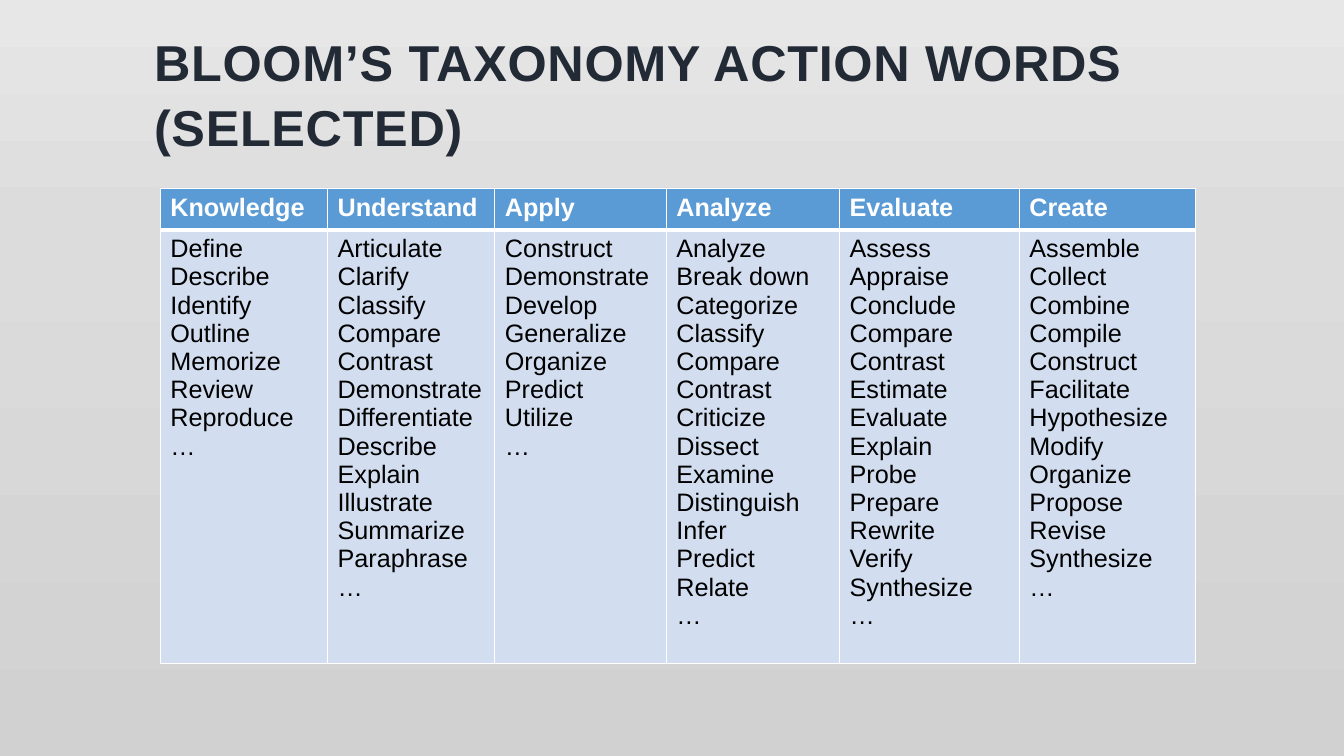
from copy import deepcopy

from pptx import Presentation
from pptx.dml.color import RGBColor
from pptx.enum.text import MSO_ANCHOR
from pptx.oxml.ns import qn
from pptx.oxml.xmlchemy import OxmlElement
from pptx.util import Pt

BOTTOM = MSO_ANCHOR.BOTTOM
FONT = "Arial"
COLORS = {
    "title": "222A35",
    "header": "5B9BD5",
    "body": "D2DEEF",
    "white": "FFFFFF",
    "black": "000000",
}
BACKGROUND = [(0, "E8E7E7"), (0.31, "DDDCDC"), (1, "D2D1D1")]
COLUMN_WIDTHS = [119.5, 119.5, 122.5, 123.8, 128.4, 125.6]
ROW_HEIGHTS = [29.5, 310]
ACTION_WORDS = {
    "Knowledge": ["Define", "Describe", "Identify", "Outline", "Memorize",
                  "Review", "Reproduce", "…"],
    "Understand": ["Articulate", "Clarify", "Classify", "Compare", "Contrast",
                   "Demonstrate", "Differentiate", "Describe", "Explain",
                   "Illustrate", "Summarize", "Paraphrase", "…"],
    "Apply": ["Construct", "Demonstrate", "Develop", "Generalize", "Organize",
              "Predict", "Utilize", "…"],
    "Analyze": ["Analyze", "Break down", "Categorize", "Classify", "Compare",
                "Contrast", "Criticize", "Dissect", "Examine", "Distinguish",
                "Infer", "Predict", "Relate", "…"],
    "Evaluate": ["Assess", "Appraise", "Conclude", "Compare", "Contrast",
                 "Estimate", "Evaluate", "Explain", "Probe", "Prepare",
                 "Rewrite", "Verify", "Synthesize", "…"],
    "Create": ["Assemble", "Collect", "Combine", "Compile", "Construct",
               "Facilitate", "Hypothesize", "Modify", "Organize", "Propose",
               "Revise", "Synthesize", "…"],
}


def rgb(name):
    return RGBColor.from_string(COLORS[name])


def set_font(p, size, color, bold):
    p.font.name = FONT
    p.font.size = Pt(size)
    p.font.bold = bold
    p.font.color.rgb = rgb(color)


def set_background(s):
    fill = s.background.fill
    fill.gradient()
    fill.gradient_angle = 270
    first = s.element.find(".//" + qn("a:gs"))
    first.addnext(deepcopy(first))
    for stop, (position, color) in zip(fill.gradient_stops, BACKGROUND):
        stop.position = position
        stop.color.rgb = RGBColor.from_string(color)


def add_title(s, text):
    tf = s.shapes.add_textbox(Pt(103), Pt(25.2), Pt(832.3), Pt(90)).text_frame
    tf.word_wrap = True
    tf.vertical_anchor = BOTTOM
    p = tf.paragraphs[0]
    r = p.add_run()
    r.text = text
    r.font._element.set("spc", "50") if hasattr(r.font, "_element") else \
        r._r.get_or_add_rPr().set("spc", "50")
    p.line_spacing = 1.07
    set_font(p, 36, "title", True)


def set_borders(cell, bottom_width):
    tcPr = cell._tc.get_or_add_tcPr()
    widths = {"a:lnL": 1, "a:lnR": 1, "a:lnT": 1, "a:lnB": bottom_width}
    for tag, width in widths.items():
        ln = OxmlElement(tag)
        ln.set("w", str(Pt(width)))
        fill = OxmlElement("a:solidFill")
        color = OxmlElement("a:srgbClr")
        color.set("val", COLORS["white"])
        fill.append(color)
        ln.append(fill)
        tcPr.append(ln)


def fill_cell(cell, lines, fill, color, bold, bottom_width):
    set_borders(cell, bottom_width)
    cell.fill.solid()
    cell.fill.fore_color.rgb = rgb(fill)
    cell.text = "\n".join(lines)
    for p in cell.text_frame.paragraphs:
        set_font(p, 18, color, bold)


def add_word_table(s):
    table = s.shapes.add_table(
        len(ROW_HEIGHTS), len(ACTION_WORDS), Pt(114.5), Pt(134.6),
        Pt(sum(COLUMN_WIDTHS)), Pt(sum(ROW_HEIGHTS))).table
    for row, height in zip(table.rows, ROW_HEIGHTS):
        row.height = Pt(height)
    for col, (level, words) in enumerate(ACTION_WORDS.items()):
        table.columns[col].width = Pt(COLUMN_WIDTHS[col])
        fill_cell(table.cell(0, col), [level], "header", "white", True, 3)
        fill_cell(table.cell(1, col), words, "body", "black", False, 1)


def main():
    prs = Presentation()
    prs.slide_width, prs.slide_height = Pt(960), Pt(540)
    s = prs.slides.add_slide(prs.slide_layouts[6])
    set_background(s)
    add_title(s, "BLOOM’S TAXONOMY ACTION WORDS (SELECTED)")
    add_word_table(s)
    prs.save("out.pptx")


if __name__ == "__main__":
    main()
